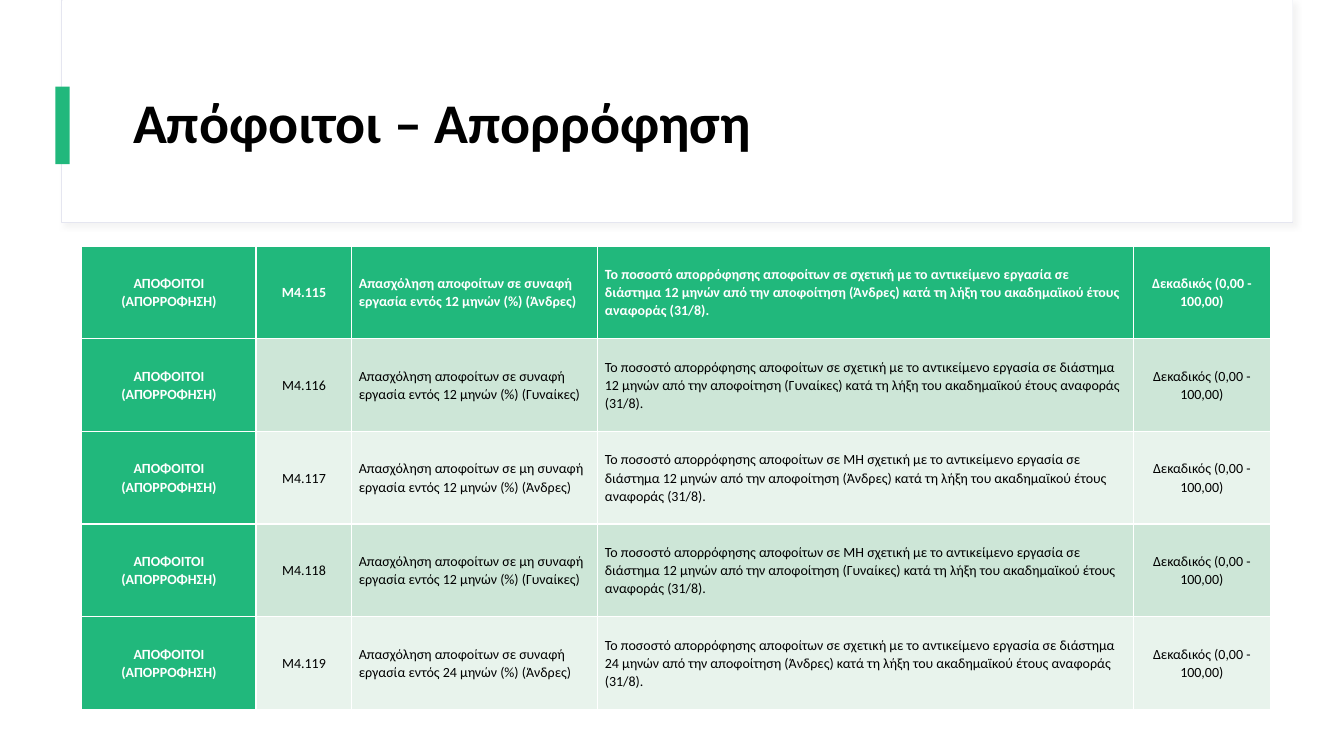
from collections import namedtuple
from dataclasses import dataclass

from lxml import etree
from pptx import Presentation
from pptx.dml.color import RGBColor
from pptx.enum.shapes import MSO_SHAPE
from pptx.enum.text import MSO_ANCHOR, MSO_AUTO_SIZE, PP_ALIGN
from pptx.oxml.ns import nsdecls
from pptx.util import Emu, Pt

Box = namedtuple("Box", "left top width height")


@dataclass(frozen=True)
class Theme:
    font: str = "Calibri"
    title_size: int = 40
    cell_size: int = 10
    green: str = "21B87C"
    bands: tuple = ("CDE6D7", "E8F3EC")
    white: str = "FFFFFF"
    black: str = "000000"
    outline: str = "E5E6F0"
    shadow: str = "D9D9D9"


THEME = Theme()
PAGE = Box(0, 0, 1333, 750)
HEADER = Box(61, 0, 1221, 221)
TABLE = Box(81, 244, 1179, 460)
COLUMN_WIDTHS = (173, 95, 244, 531, 136)
COLUMN_ALIGNS = (PP_ALIGN.CENTER, PP_ALIGN.CENTER, PP_ALIGN.LEFT,
                 PP_ALIGN.LEFT, PP_ALIGN.CENTER)

# Code, kind of work, months, gender
INDICATORS = (
    ("M4.115", "", 12, "Άνδρες"),
    ("M4.116", "", 12, "Γυναίκες"),
    ("M4.117", "μη ", 12, "Άνδρες"),
    ("M4.118", "μη ", 12, "Γυναίκες"),
    ("M4.119", "", 24, "Άνδρες"),
)


def px(length):
    return Emu(length * 9144)


def place(item, box):
    item.left, item.top, item.width, item.height = map(px, box)


def add_rectangle(page, box, color):
    shape = page.shapes.add_shape(MSO_SHAPE.RECTANGLE, *map(px, box))
    shape.shadow.inherit = False
    shape.fill.solid()
    shape.fill.fore_color.rgb = RGBColor.from_string(color)
    shape.line.fill.background()
    return shape


def add_soft_shadow(shape):
    shape.shadow.inherit = False
    effects = shape.element.spPr.find("{*}effectLst")
    effects.append(etree.fromstring(
        f'<a:outerShdw {nsdecls("a")} blurRad="{Pt(4)}" dist="{Pt(3)}" '
        f'dir="{45 * 60000}" algn="tl" rotWithShape="0">'
        f'<a:srgbClr val="{THEME.shadow}"><a:alpha val="30000"/></a:srgbClr>'
        '</a:outerShdw>'))


def add_header(page, box, text):
    frame = add_rectangle(page, box, THEME.white)
    frame.line.color.rgb = RGBColor.from_string(THEME.outline)
    frame.line.width = Pt(0.75)
    add_soft_shadow(frame)
    add_rectangle(page, Box(box.left + 1, box.top, box.width - 1, box.height - 1),
                  THEME.white)
    add_rectangle(page, Box(box.left - 6, box.top + 86, 14, 77), THEME.green)

    title = page.shapes.title
    title.element.getparent().append(title.element)  # in front of the panel
    place(title, Box(box.left + 61, box.top + 60, 1112, 129))
    title.text_frame.text = text
    title.text_frame.auto_size = MSO_AUTO_SIZE.NONE
    title.text_frame.vertical_anchor = MSO_ANCHOR.MIDDLE
    para = title.text_frame.paragraphs[0]
    para.alignment = PP_ALIGN.LEFT
    para.line_spacing = 0.9
    set_font(para.font, THEME.title_size, THEME.black, True)


def set_font(font, size, color, bold):
    font.name = THEME.font
    font.size = Pt(size)
    font.bold = bold
    font.color.rgb = RGBColor.from_string(color)


def indicator_texts(code, negation, months, gender):
    return (
        "ΑΠΟΦΟΙΤΟΙ (ΑΠΟΡΡΟΦΗΣΗ)",
        code,
        f"Απασχόληση αποφοίτων σε {negation}συναφή εργασία "
        f"εντός {months} μηνών (%) ({gender})",
        f"Το ποσοστό απορρόφησης αποφοίτων σε {negation.upper()}σχετική με το "
        f"αντικείμενο εργασία σε διάστημα {months} μηνών από την αποφοίτηση "
        f"({gender}) κατά τη λήξη του ακαδημαϊκού έτους αναφοράς (31/8).",
        "Δεκαδικός (0,00 - 100,00)",
    )


def fill_cell(cell, text, align, color, emphasized):
    cell.fill.solid()
    cell.fill.fore_color.rgb = RGBColor.from_string(color)
    cell.vertical_anchor = MSO_ANCHOR.MIDDLE
    cell.margin_left = cell.margin_right = px(7)
    cell.margin_top = cell.margin_bottom = 0
    cell.text = text
    para = cell.text_frame.paragraphs[0]
    para.alignment = align
    para.line_spacing = 1.07
    para.space_after = Pt(8)
    set_font(para.font, THEME.cell_size,
             THEME.white if emphasized else THEME.black, emphasized)


def add_indicator_table(page, box):
    """Add the table; its default style supplies the white cell borders."""
    table = page.shapes.add_table(len(INDICATORS), len(COLUMN_WIDTHS),
                                  *map(px, box)).table
    table.first_col = True
    for column, width in zip(table.columns, COLUMN_WIDTHS):
        column.width = px(width)
    for row_index, indicator in enumerate(INDICATORS):
        table.rows[row_index].height = px(box.height // len(INDICATORS))
        texts = indicator_texts(*indicator)
        for column_index, (text, align) in enumerate(zip(texts, COLUMN_ALIGNS)):
            emphasized = row_index == 0 or column_index == 0
            color = THEME.green if emphasized else THEME.bands[(row_index - 1) % 2]
            fill_cell(table.cell(row_index, column_index), text, align,
                      color, emphasized)


def main():
    deck = Presentation()
    deck.slide_width, deck.slide_height = px(PAGE.width), px(PAGE.height)
    page = deck.slides.add_slide(deck.slide_layouts.get_by_name("Title Only"))
    add_header(page, HEADER, "Απόφοιτοι – Απορρόφηση")
    add_indicator_table(page, TABLE)
    deck.save("out.pptx")


if __name__ == "__main__":
    main()
